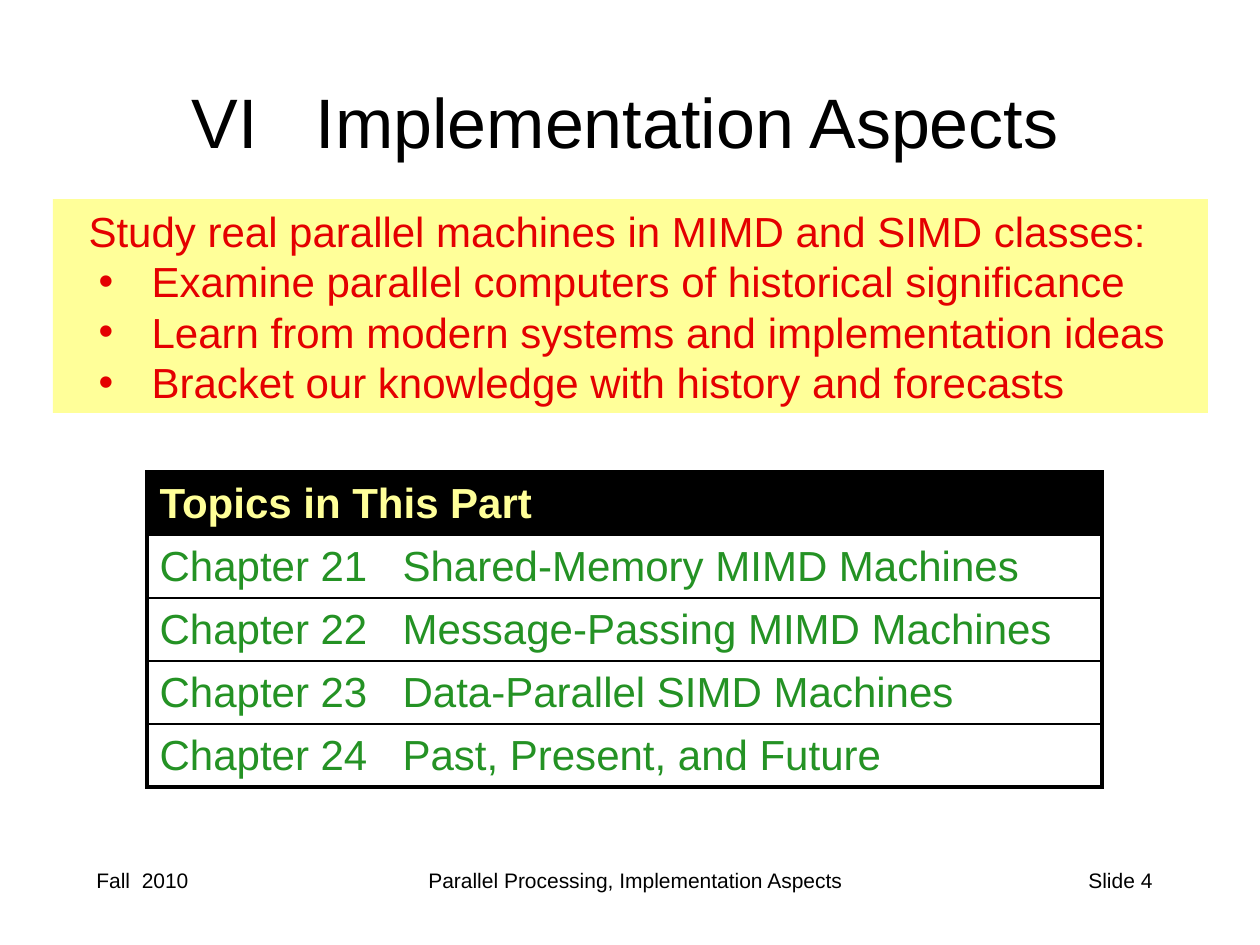
from dataclasses import dataclass

from lxml import etree
from pptx import Presentation
from pptx.dml.color import RGBColor
from pptx.enum.text import MSO_ANCHOR, MSO_AUTO_SIZE, PP_ALIGN
from pptx.oxml.ns import qn
from pptx.util import Pt

LEFT, CENTER, RIGHT = PP_ALIGN.LEFT, PP_ALIGN.CENTER, PP_ALIGN.RIGHT
TOP, MIDDLE = MSO_ANCHOR.TOP, MSO_ANCHOR.MIDDLE
NO_FIT = MSO_AUTO_SIZE.NONE
EMU_PER_PX = 914400 / 126


def px(n):
    return round(n * EMU_PER_PX)


@dataclass(frozen=True)
class Theme:
    font: str = "Arial"
    black: str = "000000"
    red: str = "E40000"
    yellow: str = "FFFF99"
    green: str = "249224"
    title: int = 40
    body: int = 24
    footer: int = 12
    outer_line: float = 2.25
    inner_line: float = 1


class Deck:
    def __init__(self, prs, theme):
        self.theme = theme
        self.s = prs.slides.add_slide(prs.slide_layouts[1])

    def run(self, p, text, size, color, bold=False, spacing=0):
        r = p.add_run()
        r.text = text
        r.font.name = self.theme.font
        r.font.size = Pt(size)
        r.font.bold = bold
        r.font.color.rgb = RGBColor.from_string(color)
        if spacing:
            r.font._element.set("spc", str(round(spacing * 100)))

    def spaced(self, p, parts, size, gap=0):
        """Write parts joined by a space widened by gap points."""
        color = self.theme.black
        for i, text in enumerate(parts):
            if i:
                self.run(p, " ", size, color, spacing=gap)
            self.run(p, text, size, color)

    def place(self, sp, box, anchor=TOP):
        sp.left, sp.top, sp.width, sp.height = map(px, box)
        tf = sp.text_frame
        tf.word_wrap = True
        tf.auto_size = NO_FIT
        tf.vertical_anchor = anchor
        return tf

    def indent(self, p, margin, first, bullet=None):
        pPr = p._p.get_or_add_pPr()
        pPr.set("marL", str(px(margin)))
        pPr.set("indent", str(px(first)))
        if bullet:
            etree.SubElement(pPr, qn("a:buChar")).set("char", bullet)
        else:
            etree.SubElement(pPr, qn("a:buNone"))

    def title(self, box, *parts):
        p = self.place(self.s.shapes.title, box, MIDDLE).paragraphs[0]
        p.alignment = CENTER
        self.spaced(p, parts, self.theme.title, gap=22)

    def goals(self, box, lead, items):
        t = self.theme
        sp = self.s.placeholders[1]
        tf = self.place(sp, box)
        sp.fill.solid()
        sp.fill.fore_color.rgb = RGBColor.from_string(t.yellow)
        for i, text in enumerate([lead] + items):
            p = tf.add_paragraph() if i else tf.paragraphs[0]
            p.space_before = p.space_after = Pt(0)
            p.line_spacing = 1.0
            if i:
                self.indent(p, 86, -53, "•")
            else:
                self.indent(p, 23, 0)
            self.run(p, text, t.body, t.red)

    def text(self, box, align, *parts):
        p = self.place(self.s.shapes.add_textbox(0, 0, 0, 0), box).paragraphs[0]
        p.alignment = align
        self.spaced(p, parts, self.theme.footer, gap=3.3)

    def borders(self, cell, widths):
        tcPr = cell._tc.get_or_add_tcPr()
        for i, (side, width) in enumerate(widths.items()):
            ln = etree.Element(qn(f"a:ln{side}"), w=str(Pt(width)))
            fill = etree.SubElement(ln, qn("a:solidFill"))
            etree.SubElement(fill, qn("a:srgbClr"), val=self.theme.black)
            tcPr.insert(i, ln)

    def topics(self, left, top, width, row_height, heading, chapters):
        t = self.theme
        rows = [heading] + [f"Chapter {n}\t{name}" for n, name in chapters]
        last = len(rows) - 1
        table = self.s.shapes.add_table(
            len(rows), 1, px(left), px(top), px(width),
            px(row_height * len(rows))).table
        table.first_row = table.horz_banding = False
        for i, text in enumerate(rows):
            table.rows[i].height = px(row_height)
            cell = table.cell(i, 0)
            cell.vertical_anchor = MIDDLE
            if i:
                cell.fill.background()
            else:
                cell.fill.solid()
                cell.fill.fore_color.rgb = RGBColor.from_string(t.black)
            self.borders(cell, {
                "L": t.outer_line,
                "R": t.outer_line,
                "T": t.inner_line if i else t.outer_line,
                "B": t.outer_line if i == last else t.inner_line})
            p = cell.text_frame.paragraphs[0]
            p.alignment = LEFT
            # The hanging indent lines up the chapter names after the tab
            self.indent(p, 243, -243)
            self.run(p, text, t.body, t.green if i else t.yellow, bold=not i)


def main():
    prs = Presentation()
    prs.slide_width, prs.slide_height = px(1260), px(945)
    deck = Deck(prs, Theme())

    # Footer
    deck.text((84, 861, 262, 63), LEFT, "Fall", "2010")
    deck.text((305, 861, 661, 63), CENTER,
              "Parallel Processing, Implementation Aspects")
    deck.text((903, 861, 262, 63), RIGHT, "Slide 4")

    # Title and goals
    deck.title((53, 63, 1144, 116), "VI", "Implementation Aspects")
    deck.goals((53, 199, 1155, 214),
               "Study real parallel machines in MIMD and SIMD classes:",
               ["Examine parallel computers of historical significance",
                "Learn from modern systems and implementation ideas",
                "Bracket our knowledge with history and forecasts"])

    # Table of chapters
    deck.topics(147, 472, 955, 63, "Topics in This Part",
                [(21, "Shared-Memory MIMD Machines"),
                 (22, "Message-Passing MIMD Machines"),
                 (23, "Data-Parallel SIMD Machines"),
                 (24, "Past, Present, and Future")])

    prs.save("out.pptx")


if __name__ == "__main__":
    main()
